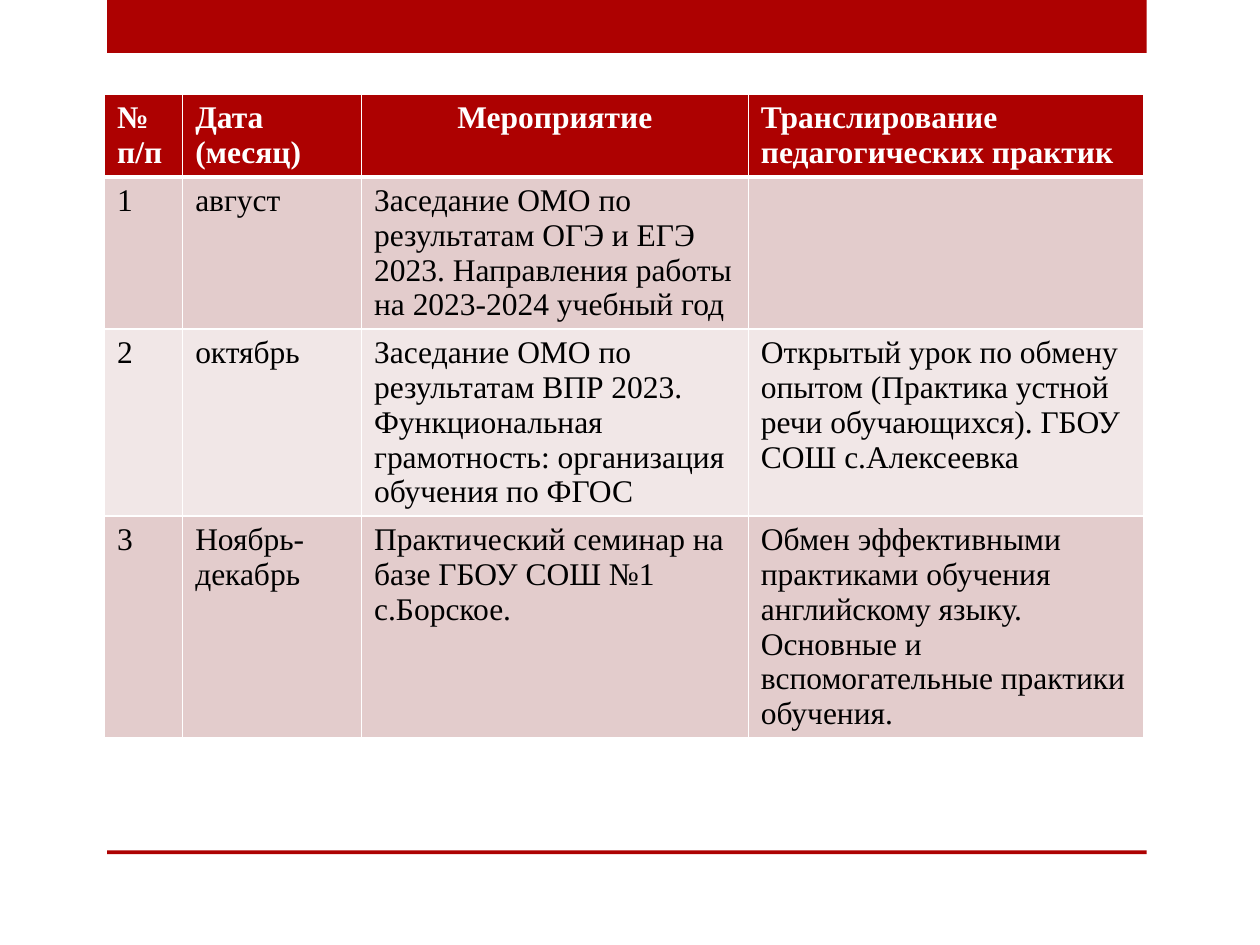
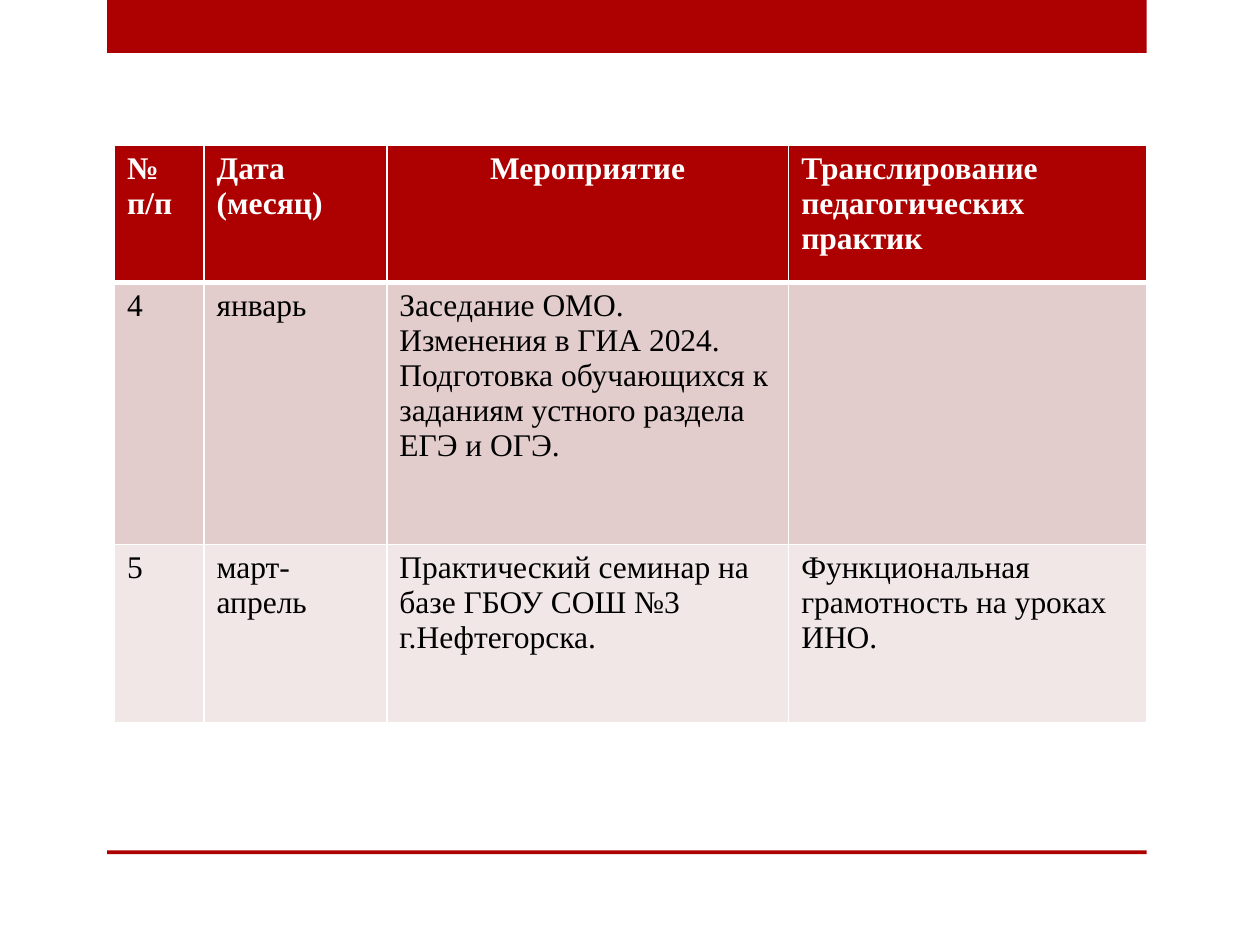
from dataclasses import dataclass

from lxml import etree
from pptx import Presentation
from pptx.dml.color import RGBColor
from pptx.enum.shapes import MSO_SHAPE
from pptx.enum.text import PP_ALIGN
from pptx.oxml.ns import qn
from pptx.util import Inches, Pt

RECTANGLE = MSO_SHAPE.RECTANGLE
LEFT, CENTER = PP_ALIGN.LEFT, PP_ALIGN.CENTER

COLORS = {
    "accent": "AD0101",
    "odd_row": "E3CCCC",
    "even_row": "F1E7E7",
    "white": "FFFFFF",
    "black": "000000",
}
FONT = "Times New Roman"
HEADINGS = ("№ п/п", "Дата (месяц)", "Мероприятие",
            "Транслирование педагогических практик")
CENTERED_HEADING = "Мероприятие"
GRID_WIDTH, HEADER_RULE_WIDTH = Pt(1), Pt(3)


@dataclass(frozen=True)
class Band:
    top: float
    height: float


@dataclass(frozen=True)
class Schedule:
    left: float
    top: float
    column_widths: tuple[float, ...]
    row_heights: tuple[float, ...]
    events: tuple[tuple[str, ...], ...]


BAND_LEFT, BAND_WIDTH = 0.85, 8.25
BANDS = (Band(0, 0.42), Band(6.75, 0.03))

SCHEDULES = (
    Schedule(
        0.83, 0.75, (0.62, 1.42, 3.07, 3.14), (0.65, 1.2, 1.48, 1.76),
        (
            ("1", "август",
             "Заседание ОМО по результатам ОГЭ и ЕГЭ 2023. "
             "Направления работы на 2023-2024 учебный год", ""),
            ("2", "октябрь",
             "Заседание ОМО по результатам ВПР 2023. Функциональная "
             "грамотность: организация обучения по ФГОС",
             "Открытый урок по обмену опытом (Практика устной речи "
             "обучающихся). ГБОУ СОШ с.Алексеевка"),
            ("3", "Ноябрь-декабрь",
             "Практический семинар на базе ГБОУ СОШ №1 с.Борское.",
             "Обмен эффективными практиками обучения английскому языку. "
             "Основные и вспомогательные практики обучения."),
        ),
    ),
    Schedule(
        0.91, 1.15, (0.71, 1.45, 3.19, 2.84), (1.09, 2.08, 1.42),
        (
            ("4", "январь",
             "Заседание ОМО. Изменения в ГИА 2024. Подготовка обучающихся "
             "к заданиям устного раздела ЕГЭ и ОГЭ.", ""),
            ("5", "март-апрель",
             "Практический семинар на базе ГБОУ СОШ №3 г.Нефтегорска.",
             "Функциональная грамотность на уроках ИНО."),
        ),
    ),
)


def set_fill(target, color: str) -> None:
    target.fill.solid()
    target.fill.fore_color.rgb = RGBColor.from_string(COLORS[color])


def write_text(frame, text: str, *, color: str = "black", size: int = 18,
               bold: bool = False, align: PP_ALIGN = LEFT) -> None:
    paragraph = frame.paragraphs[0]
    paragraph.alignment = align
    paragraph.font.size = Pt(size)
    if not text:
        return
    run = paragraph.add_run()
    run.text = text
    run.font.name = FONT
    run.font.size = Pt(size)
    run.font.bold = bold
    run.font.color.rgb = RGBColor.from_string(COLORS[color])


def set_borders(cell, row: int) -> None:
    """White grid, with a heavier rule between the header and the events."""
    properties = cell._tc.get_or_add_tcPr()
    heavy_side = {0: "lnB", 1: "lnT"}.get(row)
    for side in ("lnL", "lnR", "lnT", "lnB"):
        width = HEADER_RULE_WIDTH if side == heavy_side else GRID_WIDTH
        line = etree.SubElement(properties, qn(f"a:{side}"), w=str(int(width)))
        fill = etree.SubElement(line, qn("a:solidFill"))
        etree.SubElement(fill, qn("a:srgbClr"), val=COLORS["white"])


def add_band(slide, band: Band) -> None:
    shape = slide.shapes.add_shape(
        RECTANGLE, Inches(BAND_LEFT), Inches(band.top),
        Inches(BAND_WIDTH), Inches(band.height))
    shape.shadow.inherit = False
    set_fill(shape, "accent")
    shape.line.fill.background()


def add_schedule(slide, schedule: Schedule) -> None:
    rows = (HEADINGS, *schedule.events)
    table = slide.shapes.add_table(
        len(rows), len(HEADINGS), Inches(schedule.left), Inches(schedule.top),
        Inches(sum(schedule.column_widths)),
        Inches(sum(schedule.row_heights))).table
    table.first_row = True
    table.horz_banding = False
    for column, width in zip(table.columns, schedule.column_widths):
        column.width = Inches(width)
    for table_row, height in zip(table.rows, schedule.row_heights):
        table_row.height = Inches(height)

    for row, texts in enumerate(rows):
        is_header = row == 0
        row_color = "accent" if is_header else ("even_row", "odd_row")[row % 2]
        for column, text in enumerate(texts):
            cell = table.cell(row, column)
            set_borders(cell, row)
            set_fill(cell, row_color)
            write_text(cell.text_frame, text, bold=is_header,
                       color="white" if is_header else "black",
                       align=CENTER if text == CENTERED_HEADING else LEFT)


def main() -> None:
    deck = Presentation()
    deck.slide_width, deck.slide_height = Inches(10), Inches(7.5)
    blank_layout = deck.slide_layouts.get_by_name("Blank")
    for schedule in SCHEDULES:
        slide = deck.slides.add_slide(blank_layout)
        # Bands at the top and bottom
        for band in BANDS:
            add_band(slide, band)
        # Calendar of events
        add_schedule(slide, schedule)
    deck.save("out.pptx")


if __name__ == "__main__":
    main()
